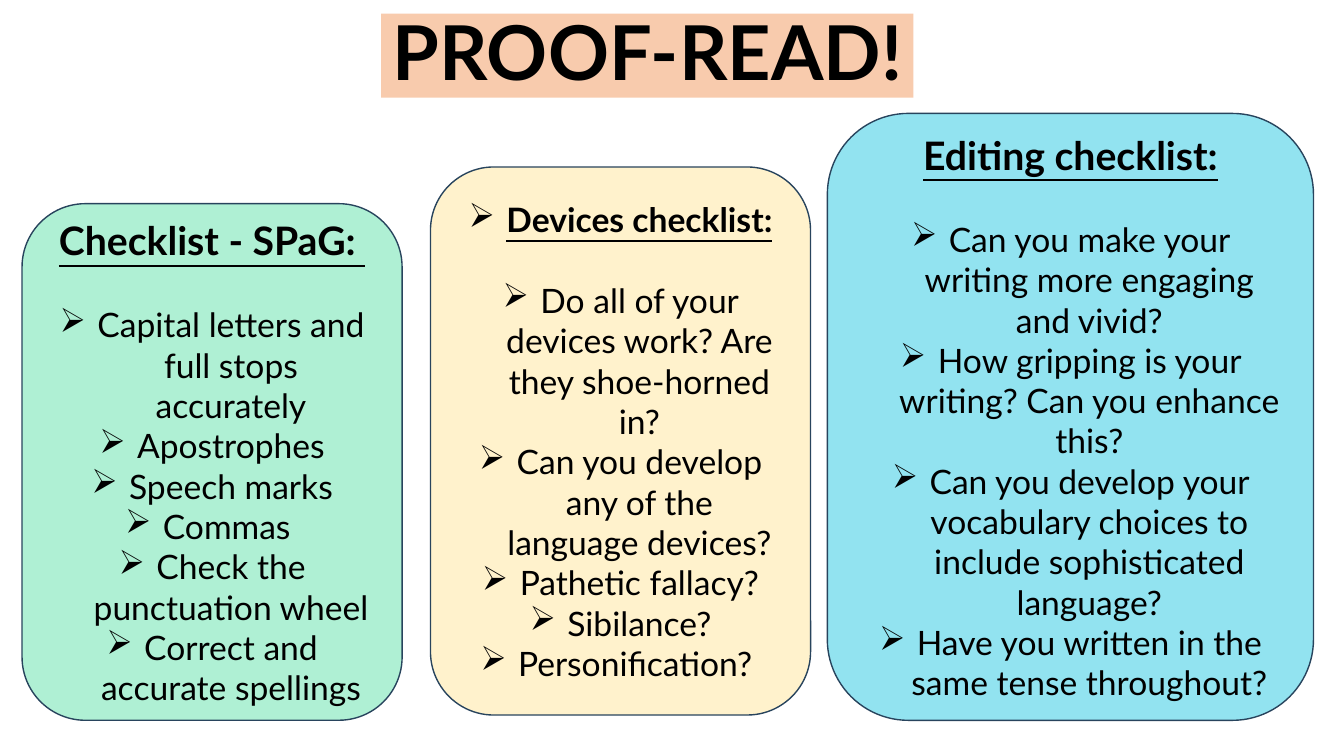
from lxml import etree
from pptx import Presentation
from pptx.dml.color import RGBColor
from pptx.enum.shapes import MSO_SHAPE
from pptx.enum.text import MSO_ANCHOR, MSO_AUTO_SIZE, PP_ALIGN
from pptx.oxml.ns import qn
from pptx.util import Emu, Pt

ROUNDED = MSO_SHAPE.ROUNDED_RECTANGLE
MIDDLE = MSO_ANCHOR.MIDDLE
CENTER = PP_ALIGN.CENTER
NO_AUTOFIT = MSO_AUTO_SIZE.NONE

PX = 9525
FONT = "Lato"
INK = "000000"
OUTLINE = "28445D"
BULLET = "➢"
INDENT = 36
ITEM_SIZE = 24
HEADING_GAP = 29

CHECKLISTS = [
    {
        "box": (21, 194, 362, 492),
        "fill": "AFF0D4",
        "heading": "Checklist - SPaG: ",
        "heading_size": 28,
        "heading_bullet": False,
        "items": [
            "Capital letters and full stops accurately",
            "Apostrophes",
            "Speech marks",
            "Commas ",
            "Check the punctuation wheel",
            "Correct and accurate spellings",
        ],
    },
    {
        "box": (788, 108, 463, 578),
        "fill": "92E3F0",
        "heading": "Editing checklist:",
        "heading_size": 28,
        "heading_bullet": False,
        "items": [
            "Can you make your writing more engaging and vivid?",
            "How gripping is your writing? Can you enhance this?",
            "Can you develop your vocabulary choices to include sophisticated language?",
            "Have you written in the same tense throughout?",
        ],
    },
    {
        "box": (410, 159, 362, 522),
        "fill": "FFF2CC",
        "heading": "Devices checklist:",
        "heading_size": 24,
        "heading_bullet": True,
        "items": [
            "Do all of your devices work? Are they shoe-horned in?",
            "Can you develop any of the language devices?",
            "Pathetic fallacy?",
            "Sibilance?",
            "Personification? ",
        ],
    },
]


def px(length):
    return Emu(length * PX)


def color(value):
    return RGBColor.from_string(value)


def fill_with(shape, value):
    shape.fill.solid()
    shape.fill.fore_color.rgb = color(value)


def add_text(paragraph, text, size, bold=False, underline=False):
    paragraph.alignment = CENTER
    run = paragraph.add_run()
    run.text = text
    run.font.name = FONT
    run.font.size = Pt(size)
    run.font.bold = bold
    run.font.underline = underline
    run.font.color.rgb = color(INK)


def add_bullet(paragraph):
    properties = paragraph._p.get_or_add_pPr()
    properties.set("marL", str(px(INDENT)))
    properties.set("indent", str(-px(INDENT)))
    etree.SubElement(properties, qn("a:buChar")).set("char", BULLET)


def set_title(slide, text):
    title = slide.shapes.title
    title.left, title.top, title.width, title.height = map(px, (363, 13, 507, 80))
    fill_with(title, "F8CBAD")
    frame = title.text_frame
    frame.auto_size = NO_AUTOFIT
    frame.word_wrap = True
    frame.vertical_anchor = MIDDLE
    frame.margin_left = frame.margin_right = 0
    frame.margin_top = frame.margin_bottom = 0
    heading = frame.paragraphs[0]
    heading.line_spacing = 0.9
    add_text(heading, text, 54, bold=True)


def add_checklist(slide, checklist):
    card = slide.shapes.add_shape(ROUNDED, *map(px, checklist["box"]))
    card.shadow.inherit = False
    fill_with(card, checklist["fill"])
    card.line.color.rgb = color(OUTLINE)
    card.line.width = Pt(1)
    frame = card.text_frame
    frame.word_wrap = True
    frame.vertical_anchor = MIDDLE
    heading = frame.paragraphs[0]
    if checklist["heading_bullet"]:
        add_bullet(heading)
    heading.space_after = Pt(HEADING_GAP)
    add_text(heading, checklist["heading"], checklist["heading_size"], bold=True, underline=True)
    for text in checklist["items"]:
        item = frame.add_paragraph()
        add_bullet(item)
        add_text(item, text, ITEM_SIZE)


def main():
    presentation = Presentation()
    presentation.slide_width = px(1280)
    presentation.slide_height = px(720)
    slide = presentation.slides.add_slide(presentation.slide_layouts[5])
    set_title(slide, "PROOF-READ!")
    for checklist in CHECKLISTS:
        add_checklist(slide, checklist)
    presentation.save("out.pptx")


if __name__ == "__main__":
    main()
